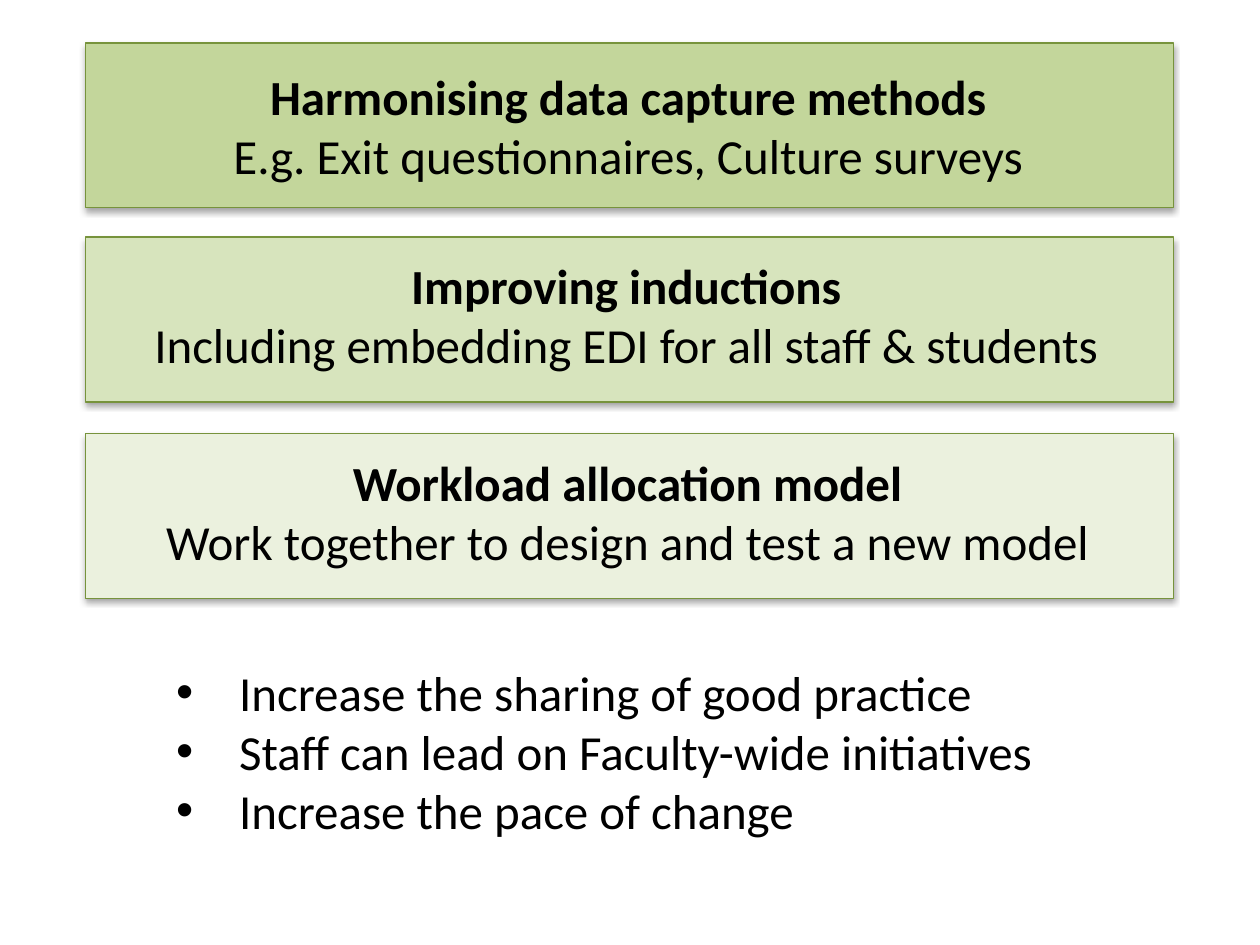
from lxml import etree
from pptx import Presentation
from pptx.dml.color import RGBColor
from pptx.enum import shapes, text
from pptx.oxml import ns
from pptx.util import Pt

BLACK = RGBColor(0x00, 0x00, 0x00)
OUTLINE = RGBColor(0x77, 0x93, 0x3C)
GREEN = RGBColor(0xC3, 0xD6, 0x9B)
LIGHT_GREEN = RGBColor(0xD7, 0xE4, 0xBD)
PALE_GREEN = RGBColor(0xEB, 0xF1, 0xDE)

PANEL_LEFT, PANEL_WIDTH, PANEL_HEIGHT = 49, 621.5, 94.3
LABEL_HEIGHT = 75

# panel top, label left, label top, label width, fill, heading, detail
THEMES = [
    (24.5, 123.1, 34.6, 471.6, GREEN,
     "Harmonising data capture methods",
     "E.g. Exit questionnaires, Culture surveys"),
    (135.4, 77, 142.6, 561.6, LIGHT_GREEN,
     "Improving inductions",
     "Including embedding EDI for all staff & students"),
    (247.7, 83.5, 254.9, 550, PALE_GREEN,
     "Workload allocation model",
     "Work together to design and test a new model"),
]
BENEFITS = [
    "Increase the sharing of good practice",
    "Staff can lead on Faculty-wide initiatives",
    "Increase the pace of change",
]


def add_element(parent, tag, **attributes):
    element = etree.SubElement(parent, ns.qn(tag))
    for name, value in attributes.items():
        element.set(name, str(value))
    return element


def add_drop_shadow(shape):
    """Give the shape a soft black shadow that falls straight down."""
    shape.shadow.inherit = False
    effects = shape._element.spPr.find(ns.qn("a:effectLst"))
    shadow = add_element(effects, "a:outerShdw", blurRad=Pt(3.1), dist=Pt(1.8),
                         dir=90 * 60000, rotWithShape=0)
    color = add_element(shadow, "a:srgbClr", val="000000")
    add_element(color, "a:alpha", val=35000)


def add_panel(slide, top, fill):
    panel = slide.shapes.add_shape(
        shapes.MSO_SHAPE.RECTANGLE,
        Pt(PANEL_LEFT), Pt(top), Pt(PANEL_WIDTH), Pt(PANEL_HEIGHT))
    panel.fill.solid()
    panel.fill.fore_color.rgb = fill
    panel.line.color.rgb = OUTLINE
    panel.line.width = Pt(0.75)
    add_drop_shadow(panel)


def add_text(slide, left, top, width, height, lines, wrap):
    box = slide.shapes.add_textbox(Pt(left), Pt(top), Pt(width), Pt(height))
    frame = box.text_frame
    frame.text = "\n".join(lines)
    frame.word_wrap = wrap
    frame.auto_size = text.MSO_AUTO_SIZE.SHAPE_TO_FIT_TEXT
    for paragraph in frame.paragraphs:
        for run in paragraph.runs:
            run.font.name = "Calibri"
            run.font.size = Pt(28)
            run.font.color.rgb = BLACK
    return box


def add_label(slide, left, top, width, fill, heading, detail):
    label = add_text(slide, left, top, width, LABEL_HEIGHT,
                     [heading, detail], wrap=False)
    label.fill.solid()
    label.fill.fore_color.rgb = fill
    paragraphs = label.text_frame.paragraphs
    for paragraph in paragraphs:
        paragraph.alignment = text.PP_ALIGN.CENTER
    paragraphs[0].runs[0].font.bold = True


def add_bullets(slide, left, top, width, height, lines):
    box = add_text(slide, left, top, width, height, lines, wrap=True)
    for paragraph in box.text_frame.paragraphs:
        properties = paragraph._p.get_or_add_pPr()
        properties.set("marL", str(Pt(36)))
        properties.set("indent", str(-Pt(36)))
        add_element(properties, "a:buFont", typeface="Arial")
        add_element(properties, "a:buChar", char="•")


def main():
    presentation = Presentation()
    presentation.slide_width = Pt(720)
    presentation.slide_height = Pt(540)
    slide = presentation.slides.add_slide(presentation.slide_layouts[6])
    for panel_top, left, top, width, fill, heading, detail in THEMES:
        add_panel(slide, panel_top, fill)
        add_label(slide, left, top, width, fill, heading, detail)
    add_bullets(slide, 93.6, 375.1, 535.7, 108.7, BENEFITS)
    presentation.save("out.pptx")


if __name__ == "__main__":
    main()
